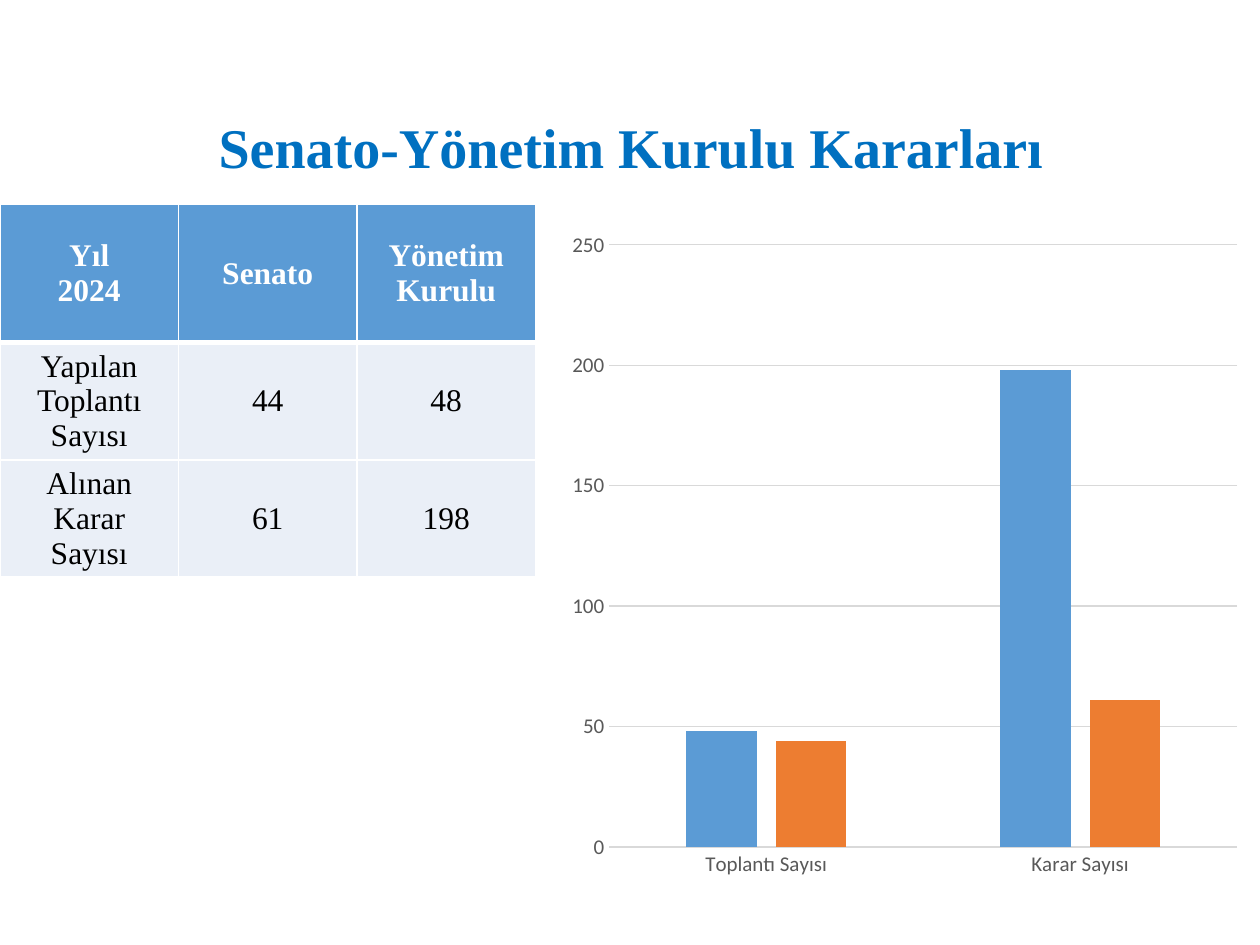
"""Builds a slide with a table and a column chart of senate and board decisions."""
from dataclasses import dataclass

import lxml.etree
import pptx
import pptx.chart.data
import pptx.dml.color
import pptx.enum.chart
import pptx.enum.text
import pptx.oxml
import pptx.oxml.ns
import pptx.util

Pt = pptx.util.Pt
BLUE, ORANGE, PALE, GRID = "5B9BD5", "ED7D31", "EAEFF7", "D9D9D9"
SERIF = "Times New Roman"


@dataclass
class Box:
    """Position and size in points."""
    left: float
    top: float
    width: float
    height: float

    def lengths(self) -> list:
        """Return the four values as lengths."""
        return [Pt(v) for v in (self.left, self.top, self.width, self.height)]


@dataclass
class RowStyle:
    """Look of one table row."""
    fill: str
    color: str
    bold: bool
    height: float
    bottom: float


@dataclass
class Series:
    """One chart series."""
    name: str
    values: tuple
    color: str


HEAD = RowStyle(BLUE, "FFFFFF", True, 79, 3)
BODY = RowStyle(PALE, "000000", False, 67, 1)
ROWS = [
    (HEAD, ("Yıl\n2024", "Senato", "Yönetim Kurulu")),
    (BODY, ("Yapılan Toplantı Sayısı", "44", "48")),
    (BODY, ("Alınan Karar Sayısı", "61", "198")),
]
CATEGORIES = ("Toplantı Sayısı", "Karar Sayısı")
SERIES = [
    Series("Yönetim Kurulu", (48, 198), BLUE),
    Series("Senato", (44, 61), ORANGE),
]
PLOT = {"x": 0.088, "y": 0.025, "w": 0.885, "h": 0.836}


def rgb(color: str) -> pptx.dml.color.RGBColor:
    """Turn a hex string into a colour."""
    return pptx.dml.color.RGBColor.from_string(color)


def apply(target, values: dict) -> None:
    """Set attributes from a dict of format values."""
    for name, value in values.items():
        setattr(target, name, value)


def set_font(font, size: float, name: str, color: str, bold: bool = False) -> None:
    """Format a font."""
    apply(font, {"size": Pt(size), "name": name, "bold": bold})
    font.color.rgb = rgb(color)


def set_fill(fill, color: str) -> None:
    """Apply a solid fill."""
    fill.solid()
    fill.fore_color.rgb = rgb(color)


def write(tf, text: str, size: float, color: str, bold: bool, spacing: float = 1.0) -> None:
    """Write centred serif paragraphs into a text frame."""
    tf.text = text
    for p in tf.paragraphs:
        apply(p, {"alignment": pptx.enum.text.PP_ALIGN.CENTER, "line_spacing": spacing})
        for r in p.runs:
            set_font(r.font, size, SERIF, color, bold)


def add_borders(cell, bottom: float) -> None:
    """Give a cell white borders."""
    tc_pr = cell._tc.get_or_add_tcPr()
    for side, width in (("L", 1), ("R", 1), ("T", 1), ("B", bottom)):
        tc_pr.append(pptx.oxml.parse_xml(
            f'<a:ln{side} {pptx.oxml.ns.nsdecls("a")} w="{Pt(width)}"><a:solidFill>'
            f'<a:srgbClr val="FFFFFF"/></a:solidFill></a:ln{side}>'))


def add_title(s, text: str, box: Box) -> None:
    """Place and format the slide title."""
    sp = s.shapes.title
    apply(sp, dict(zip(("left", "top", "width", "height"), box.lengths())))
    write(sp.text_frame, text, 32, "0070C0", True, 0.9)
    sp.text_frame.vertical_anchor = pptx.enum.text.MSO_ANCHOR.MIDDLE


def add_table(s, box: Box) -> None:
    """Draw the table of counts."""
    count = len(ROWS[0][1])
    table = s.shapes.add_table(len(ROWS), count, *box.lengths()).table
    for col in table.columns:
        col.width = Pt(box.width / count)
    for row, (style, texts) in zip(table.rows, ROWS):
        row.height = Pt(style.height)
        for cell, text in zip(row.cells, texts):
            write(cell.text_frame, text, 18, style.color, style.bold)
            cell.vertical_anchor = pptx.enum.text.MSO_ANCHOR.MIDDLE
            add_borders(cell, style.bottom)
            set_fill(cell.fill, style.fill)


def set_line(line, color: str) -> None:
    """Format a thin chart line."""
    line.color.rgb = rgb(color)
    line.width = Pt(0.75)


def set_plot_layout(chart) -> None:
    """Fix the inner plot area inside the chart."""
    plot_area = chart._chartSpace.chart.plotArea
    for old in plot_area.findall(pptx.oxml.ns.qn("c:layout")):
        plot_area.remove(old)
    layout = lxml.etree.Element(pptx.oxml.ns.qn("c:layout"))
    manual = lxml.etree.SubElement(layout, pptx.oxml.ns.qn("c:manualLayout"))
    values = {"layoutTarget": "inner", "xMode": "edge", "yMode": "edge", **PLOT}
    for tag, value in values.items():
        lxml.etree.SubElement(manual, pptx.oxml.ns.qn(f"c:{tag}"), val=str(value))
    plot_area.insert(0, layout)


def add_chart(s, box: Box) -> None:
    """Draw the clustered column chart."""
    data = pptx.chart.data.CategoryChartData()
    data.categories = CATEGORIES
    for item in SERIES:
        data.add_series(item.name, item.values)
    kind = pptx.enum.chart.XL_CHART_TYPE.COLUMN_CLUSTERED
    chart = s.shapes.add_chart(kind, *box.lengths(), data).chart
    apply(chart, {"has_legend": False, "has_title": False})
    set_font(chart.font, 10, "Calibri", "000000")
    plot = chart.plots[0]
    apply(plot, {"gap_width": 219, "overlap": -27, "vary_by_categories": False})
    for series, item in zip(plot.series, SERIES):
        set_fill(series.format.fill, item.color)
    none = pptx.enum.chart.XL_TICK_MARK.NONE
    for axis in (chart.category_axis, chart.value_axis):
        apply(axis, {"major_tick_mark": none, "minor_tick_mark": none})
        set_font(axis.tick_labels.font, 12, "Calibri", "595959")
    set_line(chart.category_axis.format.line, GRID)
    axis = chart.value_axis
    apply(axis, {"minimum_scale": 0, "maximum_scale": 250, "major_unit": 50})
    axis.format.line.fill.background()
    set_line(axis.major_gridlines.format.line, GRID)
    set_plot_layout(chart)


def main() -> None:
    """Build and save the slide."""
    prs = pptx.Presentation()
    apply(prs, {"slide_width": Pt(720), "slide_height": Pt(540)})
    s = prs.slides.add_slide(prs.slide_layouts[5])
    add_title(s, "Senato-Yönetim Kurulu Kararları", Box(36.7, 60.5, 648, 51))
    add_table(s, Box(0, 116.8, 306, sum(style.height for style, _ in ROWS)))
    add_chart(s, Box(312.5, 129.6, 405.4, 411.8))
    prs.save("out.pptx")


if __name__ == "__main__":
    main()
